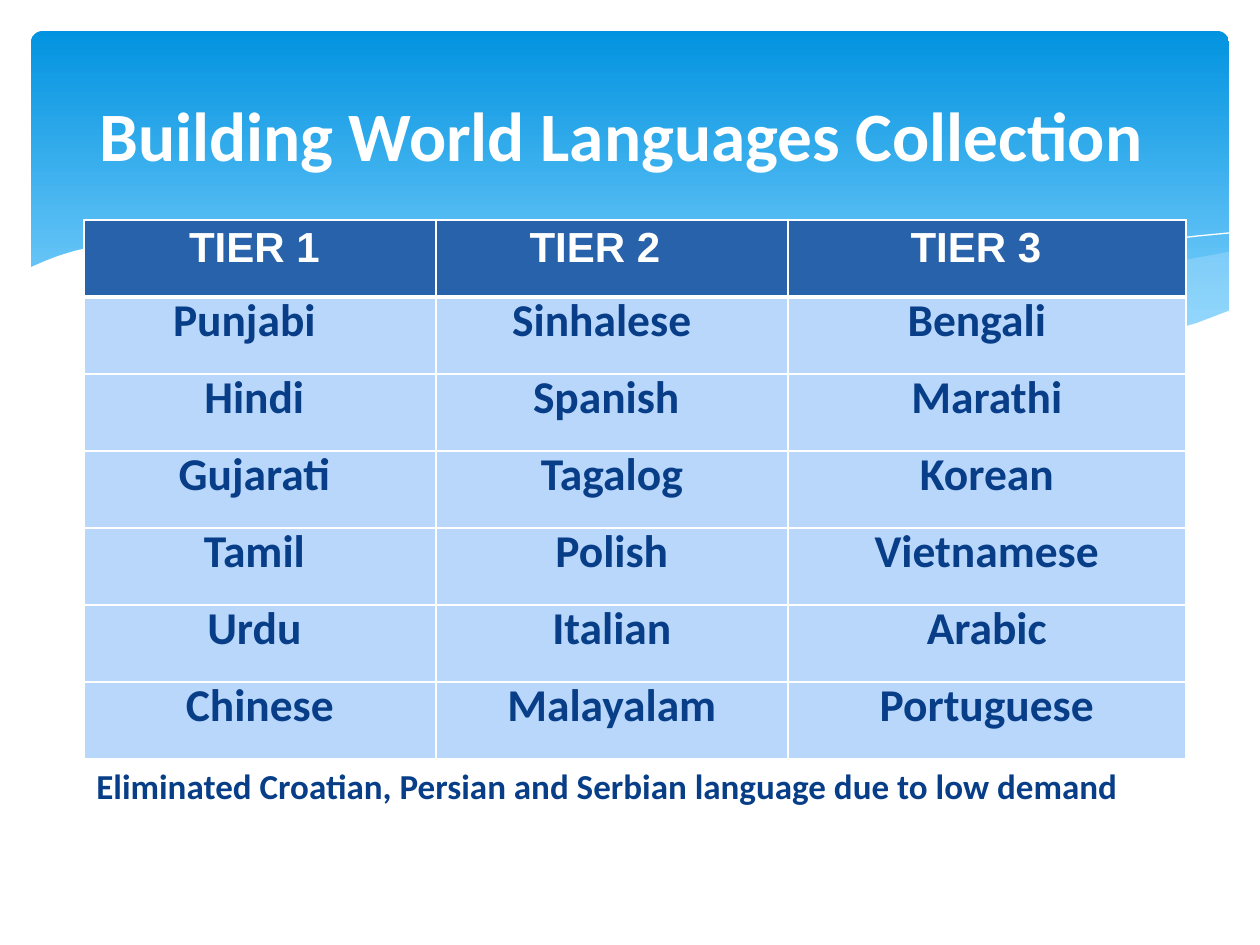
import pptx
import pptx.dml.color
import pptx.enum.shapes
import pptx.enum.text
import pptx.oxml
import pptx.oxml.ns
import pptx.util

PX = 914400 // 126
COLORS = {"sky": "0293E0", "pale_sky": "83D3FE", "mist": "C6E7FC", "white": "FFFFFF",
          "header": "2862AA", "cell": "B9D6FB", "navy": "073E87"}

# Wave outlines in px
RIGHT_WAVE = [(1228, 252), (1158, 265), (1085, 281), (1015, 298), (949, 312), (890, 324),
              (833, 334), (871, 339), (922, 345), (969, 349), (1012, 350), (1052, 349),
              (1087, 346), (1120, 342), (1150, 336), (1178, 329), (1213, 318), (1229, 311),
              (1229, 252)]
MIDDLE_WAVE = [(1125, 344), (1055, 334), (977, 320), (890, 302), (793, 280), (736, 266),
               (682, 256), (632, 247), (586, 241), (529, 236), (479, 233), (433, 234),
               (394, 237), (360, 241), (407, 247), (456, 256), (509, 266), (566, 280),
               (668, 302), (757, 321), (819, 332), (876, 340), (927, 345), (974, 349),
               (1018, 350), (1056, 350), (1092, 348)]
FALLING_LINE = [(389, 246), (413, 242), (445, 238), (488, 236), (524, 236), (567, 237),
                (617, 239), (672, 244), (733, 252), (801, 262), (876, 276), (958, 294),
                (1047, 316), (1143, 343)]
RISING_LINE = [(772, 324), (823, 310), (876, 296), (942, 281), (1015, 265), (1091, 251),
               (1146, 242), (1198, 236), (1229, 233)]
WHITE_WAVE = [(1231, 310), (1197, 323), (1159, 334), (1118, 342), (1071, 346), (1019, 349),
              (959, 346), (892, 340), (816, 330), (730, 315), (634, 294), (563, 277),
              (493, 260), (428, 248), (368, 240), (315, 234), (266, 232), (223, 232),
              (184, 233), (150, 236), (120, 241), (96, 246), (74, 251), (58, 256),
              (45, 261), (29, 268), (29, 415), (1231, 415)]

TIERS = [
    ["TIER 1", "TIER 2", "TIER 3"],
    ["Punjabi", "Sinhalese", "Bengali"],
    ["Hindi", "Spanish", "Marathi"],
    ["Gujarati", "Tagalog", "Korean"],
    ["Tamil", "Polish", "Vietnamese"],
    ["Urdu", "Italian", "Arabic"],
    ["Chinese", "Malayalam", "Portuguese"],
]
# Extra right margin in px for cells set left of centre
RIGHT_INDENTS = {"TIER 1": 11, "TIER 2": 34, "TIER 3": 22, "Punjabi": 31, "Sinhalese": 20,
                 "Bengali": 20, "Hindi": 11, "Spanish": 11, "Gujarati": 11, "Tamil": 11,
                 "Urdu": 11}


def rgb(name):
    return pptx.dml.color.RGBColor.from_string(COLORS[name])


class SlideBuilder:
    def __init__(self, slide):
        self.slide = slide
        self.shapes = slide.shapes

    def format_text(self, paragraph, size, color, font="Calibri", centred=True):
        align = pptx.enum.text.PP_ALIGN
        paragraph.alignment = align.CENTER if centred else align.LEFT
        for run in paragraph.runs:
            run.font.name = font
            run.font.size = pptx.util.Pt(size)
            run.font.bold = True
            run.font.color.rgb = rgb(color)

    def gradient_panel(self, left, top, width, height, corner):
        shape = self.shapes.add_shape(pptx.enum.shapes.MSO_SHAPE.ROUNDED_RECTANGLE,
                                      left * PX, top * PX, width * PX, height * PX)
        shape.adjustments[0] = corner
        shape.shadow.inherit = False
        shape.line.fill.background()
        shape.fill.gradient()
        shape.fill.gradient_angle = 270
        stops = shape.fill.gradient_stops
        for stop, color, position in zip(stops, ("sky", "pale_sky"), (0, 0.9)):
            stop.color.rgb = rgb(color)
            stop.position = position

    def outline(self, points, closed):
        builder = self.shapes.build_freeform(*points[0], scale=PX)
        builder.add_line_segments(points[1:], close=closed)
        shape = builder.convert_to_shape()
        shape.shadow.inherit = False
        return shape

    def wave(self, points, color, opacity=100):
        shape = self.outline(points, True)
        shape.line.fill.background()
        shape.fill.solid()
        shape.fill.fore_color.rgb = rgb(color)
        if opacity < 100:
            fill = shape.fill._xPr.find(pptx.oxml.ns.qn("a:solidFill"))
            fill[0].append(pptx.oxml.parse_xml(
                f'<a:alpha {pptx.oxml.ns.nsdecls("a")} val="{opacity * 1000}"/>'))

    def curve(self, points):
        shape = self.outline(points, False)
        shape.fill.background()
        shape.line.color.rgb = rgb("white")
        shape.line.width = pptx.util.Pt(0)

    def title(self, text, left, top, width, height):
        shape = self.shapes.title
        shape.left, shape.top, shape.width, shape.height = (
            length * PX for length in (left, top, width, height))
        frame = shape.text_frame
        frame.text = text
        frame.margin_right = 30 * PX
        frame.vertical_anchor = pptx.enum.text.MSO_ANCHOR.MIDDLE
        self.format_text(frame.paragraphs[0], 39.6, "white")
        self.shapes._spTree.append(shape._element)  # in front of the panel

    def text(self, text, left, top, width, height):
        shape = self.shapes.add_textbox(left * PX, top * PX, width * PX, height * PX)
        shape.text_frame.word_wrap = True
        shape.text_frame.text = text
        self.format_text(shape.text_frame.paragraphs[0], 20, "navy", centred=False)

    def cell_borders(self, cell, widths):
        properties = cell._tc.get_or_add_tcPr()
        for side, points in widths.items():
            properties.append(pptx.oxml.parse_xml(
                f'<a:ln{side} {pptx.oxml.ns.nsdecls("a")} w="{points * 12700}"><a:solidFill>'
                f'<a:srgbClr val="{COLORS["white"]}"/></a:solidFill></a:ln{side}>'))

    def table(self, rows, left, top, column_widths, row_height):
        frame = self.shapes.add_table(len(rows), len(column_widths), left * PX, top * PX,
                                      sum(column_widths) * PX, len(rows) * row_height * PX)
        table = frame.table
        table.horz_banding = False
        for column, width in zip(table.columns, column_widths):
            column.width = width * PX
        for row_index, words in enumerate(rows):
            table.rows[row_index].height = row_height * PX
            is_header = row_index == 0
            for column_index, word in enumerate(words):
                cell = table.cell(row_index, column_index)
                self.cell_borders(cell, {"L": 1, "R": 1, "T": 3 if row_index == 1 else 1,
                                         "B": 3 if is_header else 1})
                cell.fill.solid()
                cell.fill.fore_color.rgb = rgb("header" if is_header else "cell")
                cell.vertical_anchor = pptx.enum.text.MSO_ANCHOR.MIDDLE
                cell.margin_top = cell.margin_bottom = 0
                cell.margin_left = 9 * PX
                cell.margin_right = (9 + RIGHT_INDENTS.get(word, 0)) * PX
                cell.text_frame.text = word
                paragraph = cell.text_frame.paragraphs[0]
                paragraph.line_spacing = pptx.util.Pt(15)
                paragraph.space_after = pptx.util.Pt(10)
                if is_header:
                    self.format_text(paragraph, 24, "white", "Arial")
                else:
                    self.format_text(paragraph, 26, "navy")


def main():
    presentation = pptx.Presentation()
    presentation.slide_width = pptx.util.Inches(10)
    presentation.slide_height = pptx.util.Inches(7.5)
    builder = SlideBuilder(presentation.slides.add_slide(presentation.slide_layouts[5]))

    # Header panel with waves
    builder.gradient_panel(31, 31, 1198, 340, 0.034)
    builder.wave(RIGHT_WAVE, "mist", 29)
    builder.wave(MIDDLE_WAVE, "mist", 40)
    builder.curve(FALLING_LINE)
    builder.curve(RISING_LINE)
    builder.wave(WHITE_WAVE, "white")

    # Language tiers
    builder.table(TIERS, 84, 220, [352, 352, 398], 77)

    # Title and note
    builder.title("Building World Languages Collection", 63, 47, 1134, 173)
    builder.text("Eliminated Croatian, Persian and Serbian language due to low demand",
                 84, 758, 1113, 55)

    presentation.save("out.pptx")


if __name__ == "__main__":
    main()
